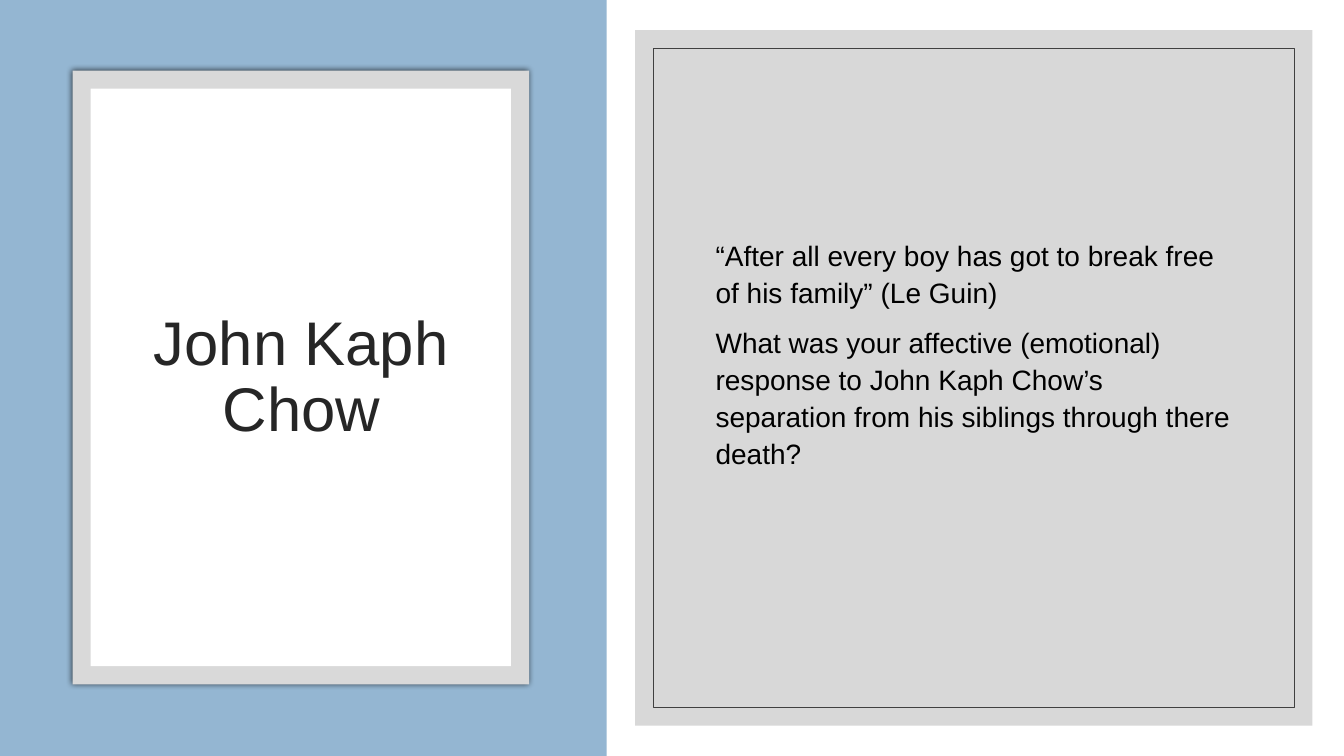
from dataclasses import dataclass

from lxml import etree
from pptx import Presentation
from pptx.dml.color import RGBColor
from pptx.enum.shapes import MSO_SHAPE
from pptx.enum.text import MSO_ANCHOR, PP_ALIGN
from pptx.oxml.ns import qn
from pptx.util import Inches, Pt

RECTANGLE = MSO_SHAPE.RECTANGLE
MIDDLE = MSO_ANCHOR.MIDDLE
LEFT, CENTER = PP_ALIGN.LEFT, PP_ALIGN.CENTER

# The slide is a grid of 160 columns by 90 rows
COLUMNS, ROWS = 160, 90
FONT = "Arial"
COLORS = {
    "white": "FFFFFF",
    "blue": "94B6D2",
    "frame": "D9D9D9",
    "panel": "BFBFBF",
    "rule": "404040",
    "title": "262626",
    "body": "000000",
    "shadow": "000000",
}


@dataclass(frozen=True)
class Area:
    column: float
    row: float
    columns: float
    rows: float

    def inset(self, margin: float) -> "Area":
        return Area(self.column + margin, self.row + margin,
                    self.columns - 2 * margin, self.rows - 2 * margin)


@dataclass(frozen=True)
class Panel:
    area: Area
    fill: str | None = None
    opacity: int = 100
    line: str | None = None
    shadow: bool = False


@dataclass(frozen=True)
class Passage:
    area: Area
    paragraphs: tuple[str, ...]
    size: float
    color: str
    align: PP_ALIGN
    line_spacing: float
    space_before: float = 0


deck = Presentation()
deck.slide_width, deck.slide_height = Inches(13.33), Inches(7.5)
slide = deck.slides.add_slide(deck.slide_layouts[6])


def place(area: Area) -> tuple[int, int, int, int]:
    across, down = deck.slide_width / COLUMNS, deck.slide_height / ROWS
    return (round(area.column * across), round(area.row * down),
            round(area.columns * across), round(area.rows * down))


def rgb(name: str) -> RGBColor:
    return RGBColor.from_string(COLORS[name])


def set_alpha(color: etree._Element, percent: int) -> None:
    etree.SubElement(color, qn("a:alpha"), val=str(percent * 1000))


def draw_panel(panel: Panel) -> None:
    shape = slide.shapes.add_shape(RECTANGLE, *place(panel.area))
    shape.shadow.inherit = False
    properties = shape._element.spPr
    if panel.fill:
        shape.fill.solid()
        shape.fill.fore_color.rgb = rgb(panel.fill)
        if panel.opacity < 100:
            set_alpha(properties.find(f"{qn('a:solidFill')}/{qn('a:srgbClr')}"), panel.opacity)
    else:
        shape.fill.background()
    if panel.line:
        shape.line.color.rgb = rgb(panel.line)
        shape.line.width = Pt(0.5)
    else:
        shape.line.fill.background()
    if panel.shadow:
        glow = etree.SubElement(properties.find(qn("a:effectLst")), qn("a:outerShdw"),
                                blurRad=str(Pt(4)), dist="0", dir="0")
        set_alpha(etree.SubElement(glow, qn("a:srgbClr"), val=COLORS["shadow"]), 66)


def write_passage(passage: Passage) -> None:
    frame = slide.shapes.add_textbox(*place(passage.area)).text_frame
    frame.word_wrap = True
    frame.vertical_anchor = MIDDLE
    for index, words in enumerate(passage.paragraphs):
        paragraph = frame.add_paragraph() if index else frame.paragraphs[0]
        paragraph.alignment = passage.align
        paragraph.line_spacing = passage.line_spacing
        paragraph.space_before = Pt(passage.space_before)
        run = paragraph.add_run()
        run.text = words
        run.font.name = FONT
        run.font.size = Pt(passage.size)
        run.font.color.rgb = rgb(passage.color)


MARGIN = 2.16
title_frame = Area(8.64, 8.4, 54.36, 73.08)
question_panel = Area(75.6, 3.6, 80.64, 82.8)

# Backdrop, title card and question panel, from back to front
for panel in (
    Panel(Area(0, 0, COLUMNS, ROWS), "white"),
    Panel(Area(-0.12, 0, 72.36, ROWS), "blue"),
    Panel(title_frame, "frame", shadow=True),
    Panel(title_frame.inset(MARGIN), "white"),
    Panel(question_panel, "panel", opacity=60),
    Panel(question_panel.inset(MARGIN), line="rule"),
):
    draw_panel(panel)

# Title and discussion question
for passage in (
    Passage(Area(12.96, 15.6, 45.84, 58.92), ("John Kaph Chow",),
            44, "title", CENTER, 0.9),
    Passage(Area(84, 12.24, 63.96, 59.5),
            ("“After all every boy has got to break free of his family” (Le Guin)",
             "What was your affective (emotional) response to John Kaph Chow’s "
             "separation from his siblings through there death?"),
            20, "body", LEFT, 1.1, 9),
):
    write_passage(passage)

deck.save("out.pptx")
